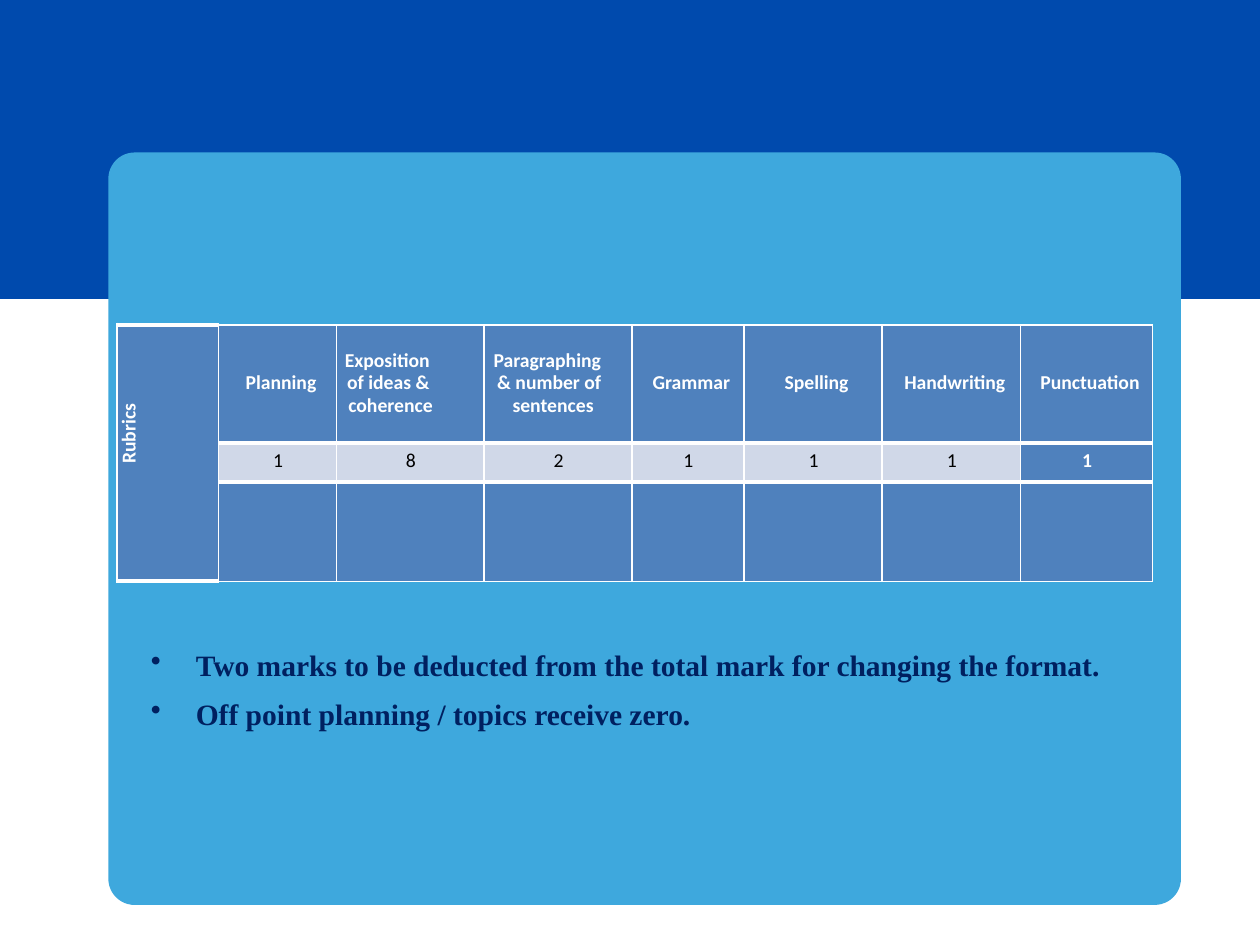
import pptx
import pptx.dml.color
import pptx.enum.shapes
import pptx.enum.text
import pptx.oxml
import pptx.oxml.ns
import pptx.util
import lxml.etree

ALIGN = pptx.enum.text.PP_ALIGN
ANCHOR = pptx.enum.text.MSO_ANCHOR
SHAPE = pptx.enum.shapes.MSO_SHAPE
WHITE, BLUE, PALE = "FFFFFF", "4F81BD", "D0D8E8"


def color(value):
    return pptx.dml.color.RGBColor.from_string(value)


def fill(obj, value):
    obj.fill.solid()
    obj.fill.fore_color.rgb = color(value)


def write(p, text, size=12, font="Calibri", ink=WHITE, bold=True, align=ALIGN.LEFT,
          left=0, first=0, before=0, line=None, bullet=None):
    p.alignment = align
    p.space_before = pptx.util.Pt(before)
    if line:
        p.line_spacing = pptx.util.Pt(line)
    pPr = p._p.get_or_add_pPr()
    pPr.set("marL", str(pptx.util.Inches(left)))
    pPr.set("indent", str(pptx.util.Inches(first)))
    if bullet:
        bu = lxml.etree.SubElement(pPr, pptx.oxml.ns.qn("a:buChar"))
        bu.set("char", bullet)
    r = p.add_run()
    r.text = text
    r.font.size = pptx.util.Pt(size)
    r.font.name = font
    r.font.bold = bold
    r.font.color.rgb = color(ink)


def fill_text(tf, lines, **style):
    for i, (text, extra) in enumerate(lines):
        p = tf.add_paragraph() if i else tf.paragraphs[0]
        write(p, text, **{**style, **extra})


class Board:
    def __init__(self, prs):
        self.prs = prs
        self.s = prs.slides.add_slide(prs.slide_layouts[6])

    def x(self, percent):
        return round(self.prs.slide_width * percent / 100)

    def y(self, percent):
        return round(self.prs.slide_height * percent / 100)

    def box(self, left, top, width, height):
        return self.x(left), self.y(top), self.x(width), self.y(height)

    def panel(self, kind, place, tone, radius=None):
        sp = self.s.shapes.add_shape(kind, *self.box(*place))
        sp.shadow.inherit = False
        fill(sp, tone)
        sp.line.fill.background()
        if radius is not None:
            sp.adjustments[0] = radius

    def table(self, place, widths, heights):
        frame = self.s.shapes.add_table(len(heights), len(widths), *self.box(*place))
        table = frame.table
        table.first_row = table.horz_banding = False
        for col, width in zip(table.columns, widths):
            col.width = self.x(width)
        for row, height in zip(table.rows, heights):
            row.height = self.y(height)
        return table

    def cell(self, cell, lines=(), tone=BLUE, top=1, bottom=1, vert=None, **style):
        cell.margin_left = cell.margin_right = cell.margin_top = cell.margin_bottom = 0
        cell.vertical_anchor = ANCHOR.MIDDLE
        fill(cell, tone)
        tcPr = cell._tc.get_or_add_tcPr()
        if vert:
            tcPr.set("vert", vert)
        for i, (side, width) in enumerate(zip("LRTB", (1, 1, top, bottom))):
            tcPr.insert(i, pptx.oxml.parse_xml(
                f'<a:ln{side} {pptx.oxml.ns.nsdecls("a")} w="{pptx.util.Pt(width)}">'
                f'<a:solidFill><a:srgbClr val="{WHITE}"/></a:solidFill></a:ln{side}>'))
        fill_text(cell.text_frame, lines, **style)

    def notes(self, place, lines, **style):
        tf = self.s.shapes.add_textbox(*self.box(*place)).text_frame
        tf.word_wrap = True
        fill_text(tf, lines, **style)


CENTER = dict(align=ALIGN.CENTER, left=0.06)
CRITERIA = [
    ([("Planning", CENTER)], "1"),
    ([("Exposition", dict(left=0.09, first=-0.02)),
      ("of ideas & coherence", dict(left=0.1, first=-0.01, line=13.5))], "8"),
    ([("Paragraphing", dict(left=0.11, first=-0.03)),
      ("& number of sentences", dict(left=0.24, first=-0.13, line=13.5))], "2"),
    ([("Grammar", CENTER)], "1"),
    ([("Spelling", CENTER)], "1"),
    ([("Handwriting", CENTER)], "1"),
    ([("Punctuation", CENTER)], "1"),
]


def main():
    prs = pptx.Presentation()
    prs.slide_width = pptx.util.Inches(10.67)
    prs.slide_height = pptx.util.Inches(8)
    board = Board(prs)

    board.panel(SHAPE.RECTANGLE, (0, 0, 100, 31.63), "004AAD")
    board.panel(SHAPE.ROUNDED_RECTANGLE, (8.6, 16.13, 85.13, 79.63), "3EA8DD", 0.035)

    widths = (8.06, 9.37, 11.72, 11.72, 8.9, 10.97, 10.97, 10.5)
    table = board.table((9.28, 34.38, 82.21, 26.13), widths, (12.5, 4.13, 9.5))
    rubrics = table.cell(0, 0)
    rubrics.merge(table.cell(2, 0))
    board.cell(rubrics, [("Rubrics", {})], top=3, bottom=3, vert="vert270",
               align=ALIGN.CENTER, left=0.33, before=5.6)
    for col, (heading, mark) in enumerate(CRITERIA, 1):
        last = col == len(CRITERIA)
        board.cell(table.cell(0, col), heading, bottom=3, line=13.8)
        board.cell(table.cell(1, col), [(mark, {})], BLUE if last else PALE, top=3, bottom=3,
                   ink=WHITE if last else "000000", bold=last,
                   align=ALIGN.CENTER, left=0.01, line=12.8)
        board.cell(table.cell(2, col), top=3)

    board.notes((11.06, 67.88, 80.41, 10.25), [
        ("Two marks to be deducted from the total mark for changing the format.", dict(before=0.1)),
        ("Off point planning / topics receive zero.", dict(before=8)),
    ], size=18, font="Times New Roman", ink="002060", left=0.38, first=-0.38, bullet="•")

    prs.save("out.pptx")


if __name__ == "__main__":
    main()
